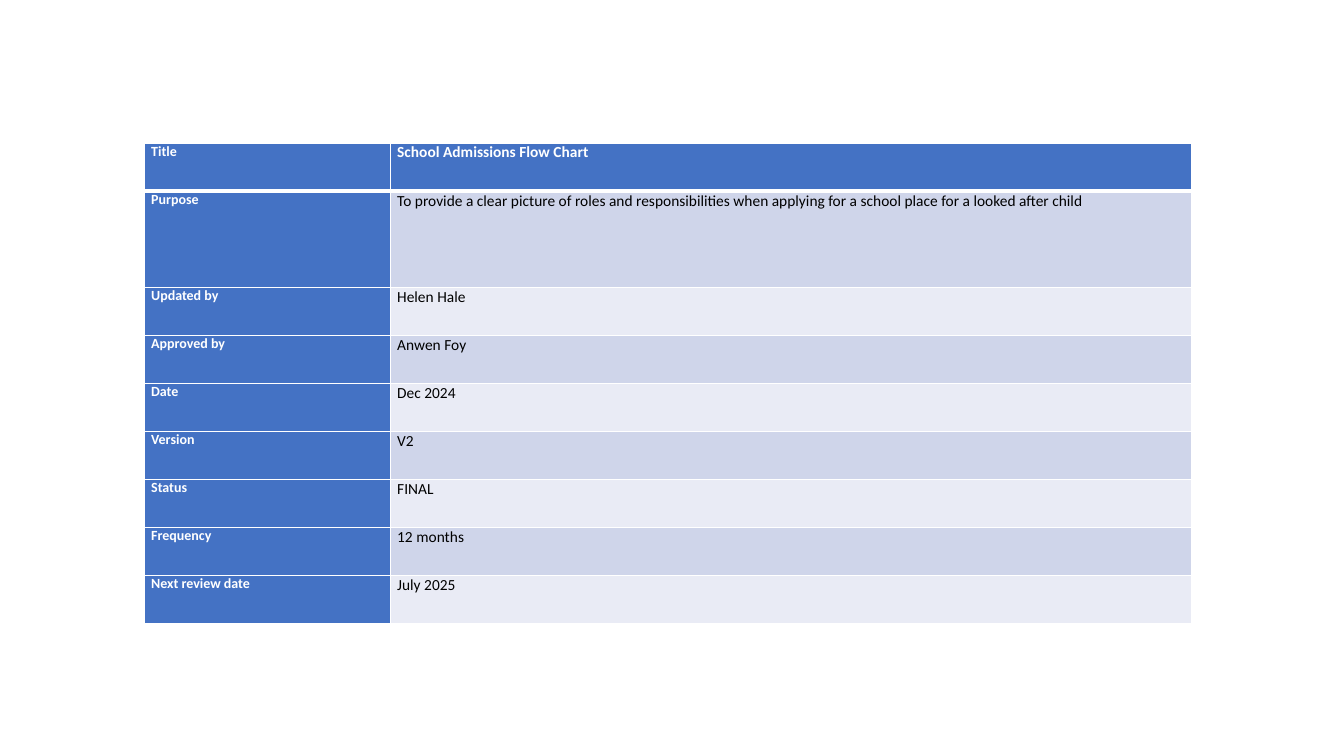
from dataclasses import dataclass

from lxml import etree
from pptx import Presentation
from pptx import util as u
from pptx.dml.color import RGBColor
from pptx.oxml.ns import qn
from pptx.table import _Cell

COLORS = {
    "header": "4472C4",
    "odd_band": "CFD5EA",
    "even_band": "E9EBF5",
    "white": "FFFFFF",
    "black": "000000",
}
FONT = "Calibri"
ROW_HEIGHT = 0.477
COLUMN_WIDTHS = (2.44, 7.95)


@dataclass
class Detail:
    label: str
    value: str
    height: float = ROW_HEIGHT


DETAILS = [
    Detail("Title", "School Admissions Flow Chart"),
    Detail(
        "Purpose",
        "To provide a clear picture of roles and responsibilities when applying "
        "for a school place for a looked after child",
        2 * ROW_HEIGHT,
    ),
    Detail("Updated by", "Helen Hale"),
    Detail("Approved by", "Anwen Foy"),
    Detail("Date", "Dec 2024"),
    Detail("Version", "V2"),
    Detail("Status", "FINAL"),
    Detail("Frequency", "12 months"),
    Detail("Next review date", "July 2025"),
]


def write_text(cell: _Cell, text: str, *, size: float, color: str, bold: bool) -> None:
    cell.margin_left = cell.margin_right = u.Inches(0.07)
    cell.margin_top = cell.margin_bottom = 0
    span = cell.text_frame.paragraphs[0].add_run()
    span.text = text
    span.font.name = FONT
    span.font.size = u.Pt(size)
    span.font.bold = bold
    span.font.color.rgb = RGBColor.from_string(COLORS[color])


def set_borders(cell: _Cell, *, top: float = 1, bottom: float = 1) -> None:
    """Draw white cell borders; must run before the fill, which follows them in the XML."""
    properties = cell._tc.get_or_add_tcPr()
    for side, width in (("L", 1), ("R", 1), ("T", top), ("B", bottom)):
        line = etree.SubElement(properties, qn(f"a:ln{side}"), w=str(u.Pt(width)))
        fill = etree.SubElement(line, qn("a:solidFill"))
        etree.SubElement(fill, qn("a:srgbClr"), val=COLORS["white"])


def fill_cell(cell: _Cell, color: str) -> None:
    cell.fill.solid()
    cell.fill.fore_color.rgb = RGBColor.from_string(COLORS[color])


def main() -> None:
    deck = Presentation()
    deck.slide_width, deck.slide_height = u.Inches(13.33), u.Inches(7.5)
    page = deck.slides.add_slide(deck.slide_layouts[6])
    table = page.shapes.add_table(
        len(DETAILS), len(COLUMN_WIDTHS), u.Inches(1.43), u.Inches(1.42),
        u.Inches(sum(COLUMN_WIDTHS)), u.Inches(sum(d.height for d in DETAILS)),
    ).table
    for column, width in zip(table.columns, COLUMN_WIDTHS):
        column.width = u.Inches(width)

    for index, detail in enumerate(DETAILS):
        table.rows[index].height = u.Inches(detail.height)
        band = "odd_band" if index % 2 else "even_band"
        for column, text in enumerate((detail.label, detail.value)):
            cell = table.cell(index, column)
            is_header = index == 0 or column == 0
            write_text(cell, text, size=11 if column else 10,
                       color="white" if is_header else "black", bold=is_header)
            set_borders(cell, top=3 if index == 1 else 1, bottom=3 if index == 0 else 1)
            fill_cell(cell, "header" if is_header else band)

    deck.save("out.pptx")


if __name__ == "__main__":
    main()
